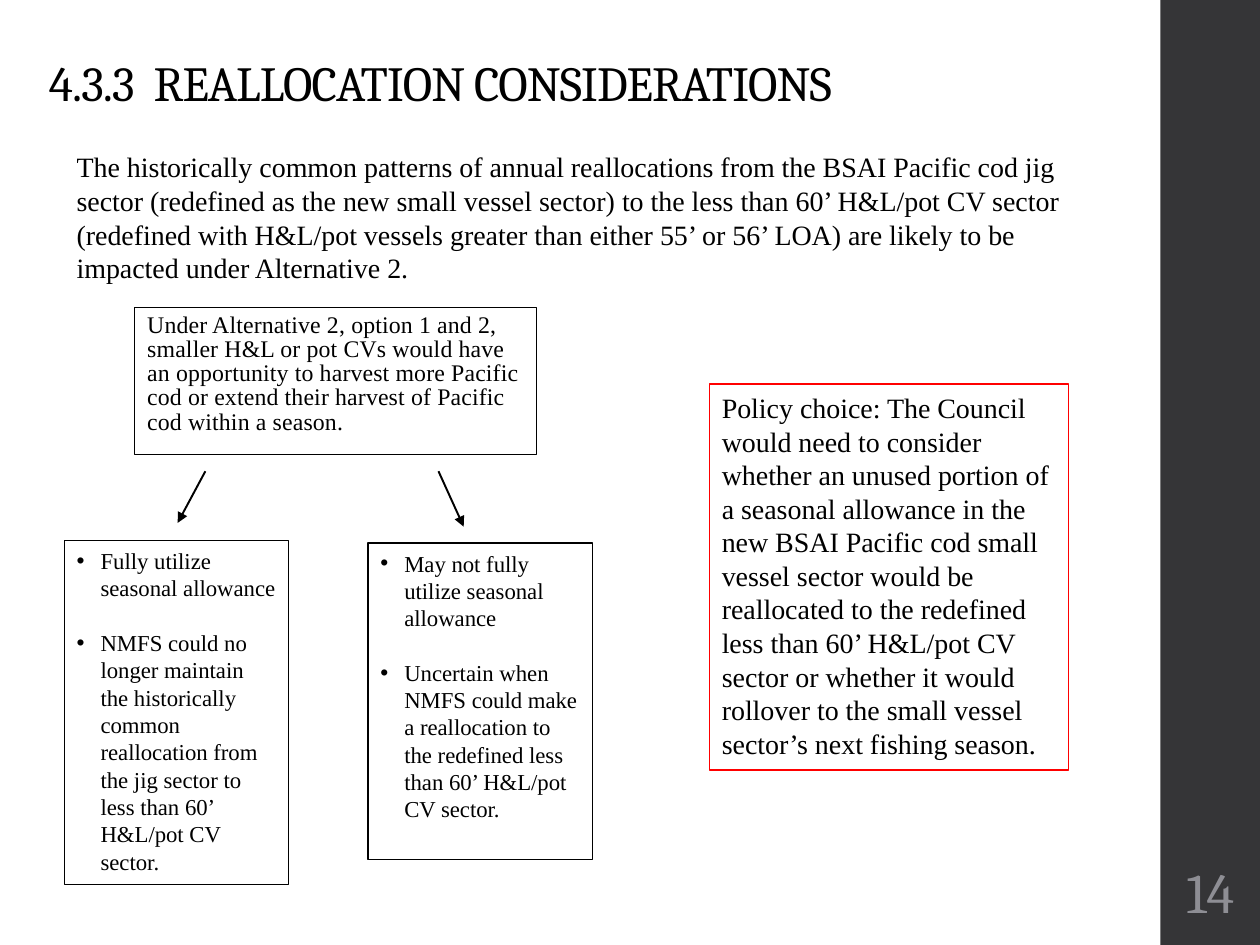
from lxml.etree import SubElement
from pptx import Presentation
from pptx.dml.color import RGBColor
from pptx.enum.shapes import MSO_CONNECTOR, MSO_SHAPE
from pptx.enum.text import MSO_ANCHOR as Anchor, MSO_AUTO_SIZE as AutoSize, PP_ALIGN as Align
from pptx.oxml.ns import qn
from pptx.util import Inches, Pt

COLORS = {"ink": "000000", "band": "353537", "number": "8E8E94", "policy": "FF0000"}
CELL = Inches(0.1)  # the slide is a grid of 100 columns by 75 rows
COLS, ROWS = 100, 75
SERIF, HEADING = "Times New Roman", "Cambria"
BULLET_INDENT = Inches(0.19)

BRANCHES = [
    ((5.1, 42.9, 17.8, 27.3), [
        "Fully utilize seasonal allowance",
        "NMFS could no longer maintain the historically common reallocation from "
        "the jig sector to less than 60’ H&L/pot CV sector."]),
    ((29.2, 43.1, 17.8, 25.1), [
        "May not fully utilize seasonal allowance",
        "Uncertain when NMFS could make a reallocation to the redefined less than "
        "60’ H&L/pot CV sector."]),
]
ARROWS = [(16.3, 37.4, 14.1, 41.5), (34.8, 37.4, 36.8, 41.8)]


def rgb(name):
    return RGBColor.from_string(COLORS[name])


def grid(*cells):
    return [round(n * CELL) for n in cells]


def set_all(obj, values):
    for name, value in values.items():
        setattr(obj, name, value)


def add_rect(s, cells, fill=None, line=None, weight=0.75):
    sp = s.shapes.add_shape(MSO_SHAPE.RECTANGLE, *grid(*cells))
    sp.shadow.inherit = False
    if fill:
        sp.fill.solid()
        sp.fill.fore_color.rgb = rgb(fill)
    else:
        sp.fill.background()
    if line:
        sp.line.color.rgb = rgb(line)
        sp.line.width = Pt(weight)
    else:
        sp.line.fill.background()
    return sp


def add_bullet(p):
    pPr = p._p.get_or_add_pPr()
    pPr.set("marL", str(BULLET_INDENT))
    pPr.set("indent", str(-BULLET_INDENT))
    SubElement(pPr, qn("a:buFont"), typeface="Arial")
    SubElement(pPr, qn("a:buChar"), char="•")


def write(sp, texts, size, font=SERIF, color="ink", frame=None, para=None,
          bullets=False, tracking=None):
    """Fill a shape with paragraphs; tracking is in hundredths of a point."""
    tf = sp.text_frame
    set_all(tf, {"word_wrap": True, "auto_size": AutoSize.NONE,
                 "vertical_anchor": Anchor.TOP, **(frame or {})})
    for i, text in enumerate(texts):
        p = tf.add_paragraph() if i else tf.paragraphs[0]
        set_all(p, {"alignment": Align.LEFT, **(para or {})})
        if i:
            p.space_before = Pt(size * 1.2)
        if bullets:
            add_bullet(p)
        r = p.add_run()
        r.text = text
        set_all(r.font, {"name": font, "size": Pt(size)})
        r.font.color.rgb = rgb(color)
        if tracking:
            r._r.get_or_add_rPr().set("spc", str(tracking))


def add_text(s, cells, text, size, **style):
    write(s.shapes.add_textbox(*grid(*cells)), [text], size, **style)


def add_arrow(s, ends):
    line = s.shapes.add_connector(MSO_CONNECTOR.STRAIGHT, *grid(*ends))
    line.line.color.rgb = rgb("ink")
    line.line.width = Pt(1.1)
    SubElement(line.line._get_or_add_ln(), qn("a:tailEnd"), type="triangle")
    SubElement(line._element.spPr, qn("a:effectLst"))


def main():
    prs = Presentation()
    prs.slide_width, prs.slide_height = grid(COLS, ROWS)
    s = prs.slides.add_slide(prs.slide_layouts[6])

    add_rect(s, (92.1, 0, COLS - 92.1, ROWS), fill="band")
    add_text(s, (2.9, 2.7, 96.1, 6.7), "4.3.3  REALLOCATION CONSIDERATIONS", 28,
             font=HEADING, frame={"vertical_anchor": Anchor.BOTTOM},
             para={"line_spacing": 0.9}, tracking=-50)
    add_text(s, (92.3, 67.5, 7.5, 6.5), "14", 32, font=HEADING, color="number",
             frame={"vertical_anchor": Anchor.MIDDLE, "margin_left": Inches(0.03),
                    "margin_right": Inches(0.03)},
             para={"alignment": Align.CENTER})
    add_text(s, (5.1, 11.4, 83.7, 11.8),
             "The historically common patterns of annual reallocations from the BSAI "
             "Pacific cod jig sector (redefined as the new small vessel sector) to the "
             "less than 60’ H&L/pot CV sector (redefined with H&L/pot vessels greater "
             "than either 55’ or 56’ LOA) are likely to be impacted under Alternative 2.",
             16)

    write(add_rect(s, (10.7, 24.4, 31.9, 11.7), line="ink"),
          ["Under Alternative 2, option 1 and 2, smaller H&L or pot CVs would have an "
           "opportunity to harvest more Pacific cod or extend their harvest of Pacific "
           "cod within a season."],
          13.6, para={"line_spacing": 0.85}, tracking=10)
    for ends in ARROWS:
        add_arrow(s, ends)
    for cells, points in BRANCHES:
        write(add_rect(s, cells, line="ink"), points, 13, bullets=True)

    write(add_rect(s, (56.3, 30.5, 28.5, 30.6), line="policy", weight=1),
          ["Policy choice: The Council would need to consider whether an unused portion "
           "of a seasonal allowance in the new BSAI Pacific cod small vessel sector "
           "would be reallocated to the redefined less than 60’ H&L/pot CV sector or "
           "whether it would rollover to the small vessel sector’s next fishing season."],
          16)
    prs.save("out.pptx")


if __name__ == "__main__":
    main()
